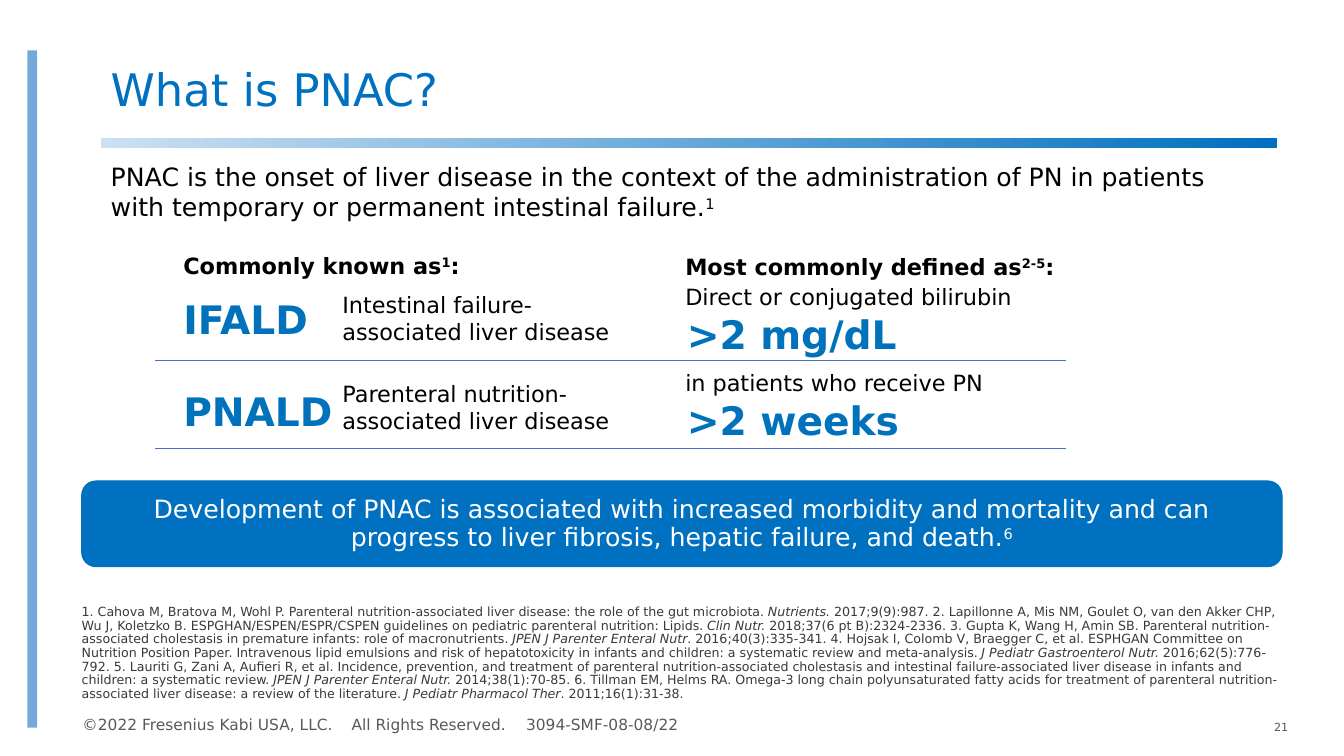
from lxml.etree import SubElement
from pptx import Presentation
from pptx.dml.color import RGBColor
from pptx.enum.shapes import MSO_CONNECTOR, MSO_SHAPE
from pptx.enum.text import MSO_ANCHOR, MSO_AUTO_SIZE, PP_ALIGN
from pptx.oxml.ns import qn
from pptx.util import Cm, Pt

HUES = {
    "blue": "0070C0", "term": "0072BB", "side": "73AADB", "pale": "CCE0F2",
    "rule": "4472C4", "black": "000000", "white": "FFFFFF",
    "gray": "595959", "cite": "3B3838",
}
FACE = "DejaVu Sans"
PAD = (0.25, 0.13, 0.25, 0.13)
HEAD = {"size": Pt(16), "bold": True}
LABEL = {"size": Pt(16)}
TERM = {"size": Pt(28), "bold": True}
LEAD = {"size": Pt(18)}

CITES = (
    "1. Cahova M, Bratova M, Wohl P. Parenteral nutrition-associated liver disease: "
    "the role of the gut microbiota. |Nutrients.| 2017;9(9):987.",
    "2. Lapillonne A, Mis NM, Goulet O, van den Akker CHP, Wu J, Koletzko B. "
    "ESPGHAN/ESPEN/ESPR/CSPEN guidelines on pediatric parenteral nutrition: Lipids. "
    "|Clin Nutr. |2018;37(6 pt B):2324-2336.",
    "3. Gupta K, Wang H, Amin SB. Parenteral nutrition-associated cholestasis in premature infants: "
    "role of macronutrients. |JPEN J Parenter Enteral Nutr|. 2016;40(3):335-341.",
    "4. Hojsak I, Colomb V, Braegger C, et al. ESPHGAN Committee on Nutrition Position Paper. "
    "Intravenous lipid emulsions and risk of hepatotoxicity in infants and children: "
    "a systematic review and meta-analysis. |J Pediatr Gastroenterol Nutr.| 2016;62(5):776-792.",
    "5. Lauriti G, Zani A, Aufieri R, et al. Incidence, prevention, and treatment of parenteral "
    "nutrition-associated cholestasis and intestinal failure-associated liver disease in infants "
    "and children: a systematic review. |JPEN J Parenter Enteral Nutr. |2014;38(1):70-85.",
    "6. Tillman EM, Helms RA. Omega-3 long chain polyunsaturated fatty acids for treatment of "
    "parenteral nutrition-associated liver disease: a review of the literature. "
    "|J Pediatr Pharmacol Ther|. 2011;16(1):31-38.",
)


def color(name):
    return RGBColor.from_string(HUES[name])


def apply(thing, values):
    for key, value in values.items():
        setattr(thing, key, value)


def place(shape, box):
    apply(shape, dict(zip(("left", "top", "width", "height"), map(Cm, box))))


def write(shape, text, font, hue="black", para=None, pad=PAD, anchor=MSO_ANCHOR.TOP, slant=False):
    frame = shape.text_frame
    sides = ("margin_left", "margin_top", "margin_right", "margin_bottom")
    apply(frame, dict(zip(sides, map(Cm, pad))))
    apply(frame, {"word_wrap": True, "auto_size": MSO_AUTO_SIZE.NONE, "vertical_anchor": anchor})
    line = frame.paragraphs[0]
    apply(line, {"alignment": PP_ALIGN.LEFT, "space_before": Pt(0), **(para or {})})
    for rank, part in enumerate(text.split("|")):
        run = line.add_run()
        run.text = part
        apply(run.font, {"name": FACE, **font})
        run.font.color.rgb = color(hue)
        if rank % 2 and slant:
            run.font.italic = True
        elif rank % 2:
            run._r.get_or_add_rPr().set("baseline", "30000")
    return line


def label(slide, box, text, font, hue="black", **rest):
    return write(slide.shapes.add_textbox(*map(Cm, box)), text, font, hue, **rest)


def block(slide, box, hue, kind=MSO_SHAPE.RECTANGLE):
    shape = slide.shapes.add_shape(kind, *map(Cm, box))
    shape.shadow.inherit = False
    shape.fill.solid()
    shape.fill.fore_color.rgb = color(hue)
    shape.line.fill.background()
    return shape


def frame_page(slide):
    block(slide, (0.69, 1.27, 0.25, 17.07), "side")
    bar = block(slide, (2.54, 3.48, 29.64, 0.25), "blue")
    bar.fill.gradient()
    bar.fill.gradient_angle = 0
    for stop, hue in zip(bar.fill.gradient_stops, ("pale", "blue")):
        stop.color.rgb = color(hue)


def header(slide, box):
    left, top, width, height = box
    title, body = slide.placeholders
    place(title, (left, top, 22.76, 1.9))
    write(title, "What is PNAC?", {"size": Pt(32)}, "blue", {"line_spacing": 0.9})
    place(body, (left, top + 2.36, width, height - 2.36))
    line = write(
        body,
        "PNAC is the onset of liver disease in the context of the administration of PN "
        "in patients with temporary or permanent intestinal failure.|1",
        LEAD,
    )
    props = line._p.get_or_add_pPr()
    props.set("marL", "0")
    props.set("indent", "0")
    SubElement(props, qn("a:buNone"))


def names(slide, box):
    left, top, width, _ = box
    label(slide, (left, top, 10.39, 0.94), "Commonly known as|1|:", HEAD)
    rows = (
        ("IFALD", "Intestinal failure-associated liver disease"),
        ("PNALD", "Parenteral nutrition-associated liver disease"),
    )
    for row, (term, sense) in enumerate(rows):
        label(slide, (left, top + 1.09 + 2.31 * row, 4.72, 1.45), term, TERM, "term")
        label(slide, (left + 4.01, top + 0.99 + 2.24 * row, width - 4.01, 1.63), sense, LABEL)


def limits(slide, box):
    left, top, width, _ = box
    label(slide, (left, top, width, 0.94), "Most commonly defined as|2-5|:", HEAD)
    rows = (
        ("Direct or conjugated bilirubin", ">2 mg/dL"),
        ("in patients who receive PN", ">2 weeks"),
    )
    for row, (lead, value) in enumerate(rows):
        down = top + 2.16 * row
        label(slide, (left, down + 0.76, 8.9, 0.94), lead, LABEL)
        label(slide, (left + 0.04, down + 1.45, 6.68, 1.45), value, TERM, "term")


def rules(slide, box):
    left, top, width, height = box
    for high in (top, top + height):
        ends = map(Cm, (left, high, left + width, high))
        line = slide.shapes.add_connector(MSO_CONNECTOR.STRAIGHT, *ends)
        line.line.color.rgb = color("rule")
        line.line.width = Pt(0.5)
        SubElement(line._element.spPr, qn("a:effectLst"))


def banner(slide, box):
    shape = block(slide, box, "blue", MSO_SHAPE.ROUNDED_RECTANGLE)
    shape.line.color.rgb = color("term")
    shape.line.width = Pt(0.75)
    write(
        shape,
        "Development of PNAC is associated with increased morbidity and mortality and can "
        "progress to liver fibrosis, hepatic failure, and death.|6",
        LEAD, "white", {"alignment": PP_ALIGN.CENTER, "line_spacing": 0.95},
        (0.51, 0, 0.51, 0), MSO_ANCHOR.MIDDLE,
    )


def footer(slide, box):
    left, top, width, _ = box
    label(slide, (left + 0.23, top, 30.25, 3.25), " ".join(CITES), {"size": Pt(9)}, "cite",
          para={"line_spacing": 0.9}, pad=(0, 0, 0, 0.08),
          anchor=MSO_ANCHOR.BOTTOM, slant=True)
    line = label(slide, (left, top + 3.18, 29.59, 1.04),
                 "©2022 Fresenius Kabi USA, LLC.\tAll Rights Reserved.\t3094-SMF-08-08/22",
                 {"size": Pt(11)}, "gray", pad=(0.25, 0.13, 0.25, 0), anchor=MSO_ANCHOR.MIDDLE)
    tabs = SubElement(line._p.get_or_add_pPr(), qn("a:tabLst"))
    for stop in (6.78, 11.18):
        SubElement(tabs, qn("a:tab"), pos=str(Cm(stop)), algn="l")
    label(slide, (left + width - 2.59, top + 3.58, 2.59, 0.51), "21", {"size": Pt(8)}, "gray",
          para={"alignment": PP_ALIGN.RIGHT, "line_spacing": 0.9}, anchor=MSO_ANCHOR.MIDDLE)


def main():
    deck = Presentation()
    deck.slide_width, deck.slide_height = Cm(33.87), Cm(19.05)
    slide = deck.slides.add_slide(deck.slide_layouts[1])
    frame_page(slide)
    header(slide, (2.54, 1.57, 28.98, 4.17))
    names(slide, (4.37, 6.22, 12.2, 4.85))
    limits(slide, (17.02, 6.25, 13.67, 5.05))
    rules(slide, (3.9, 9.09, 22.97, 2.21))
    banner(slide, (2.06, 12.12, 30.25, 2.16))
    footer(slide, (1.83, 14.5, 30.89, 4.22))
    deck.save("out.pptx")


if __name__ == "__main__":
    main()
